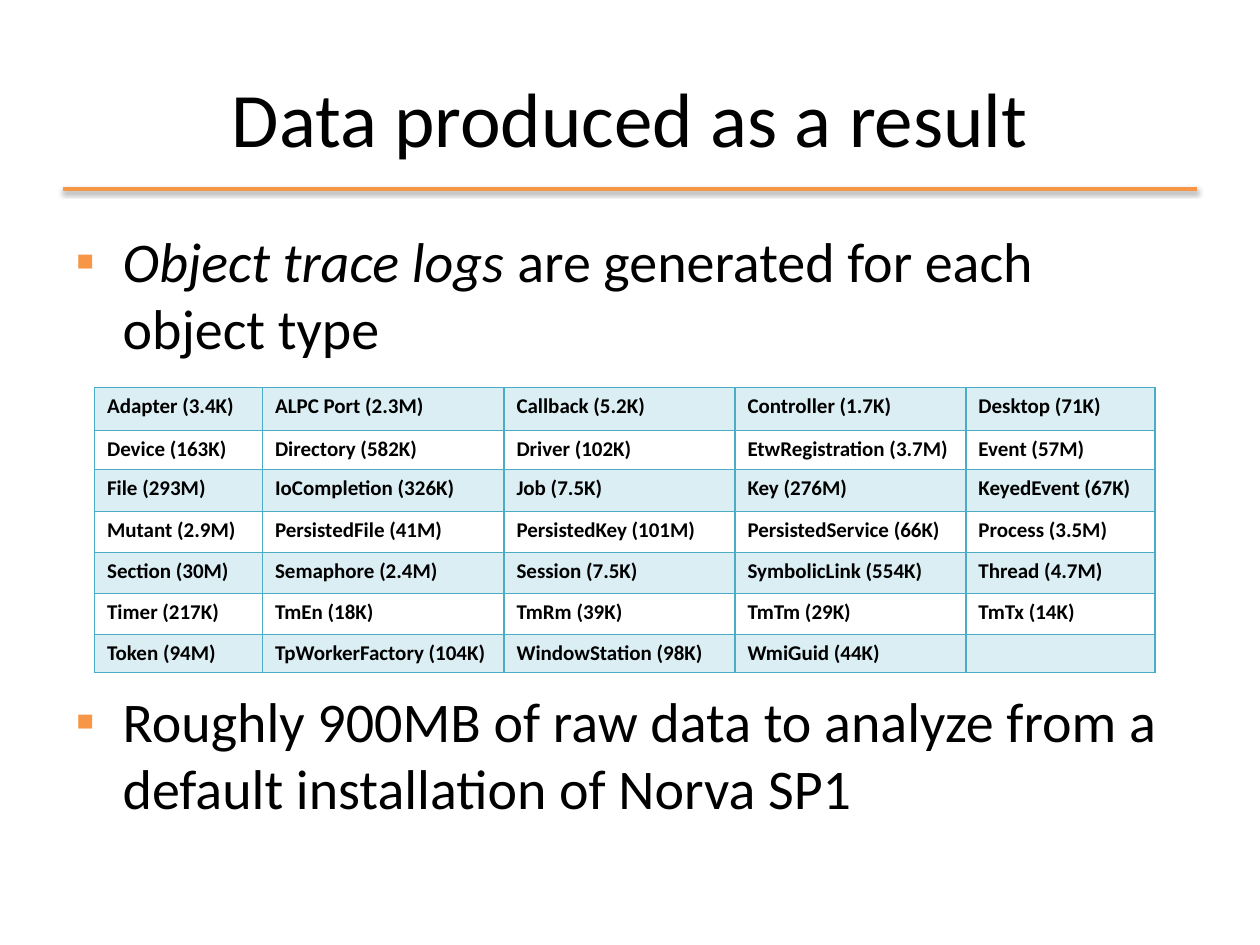
from dataclasses import dataclass

from lxml import etree
from pptx import Presentation
from pptx.dml.color import RGBColor
from pptx.enum.shapes import MSO_CONNECTOR
from pptx.enum.text import MSO_ANCHOR, PP_ALIGN
from pptx.oxml.ns import qn
from pptx.util import Pt

STRAIGHT = MSO_CONNECTOR.STRAIGHT
MIDDLE, TOP = MSO_ANCHOR.MIDDLE, MSO_ANCHOR.TOP
CENTER = PP_ALIGN.CENTER


@dataclass(frozen=True)
class Theme:
    font: str = "Calibri"
    ink: str = "000000"
    accent: str = "F79646"
    grid: str = "4BACC6"
    title: int = 44
    body: int = 32
    cell: int = 12


THEME = Theme()

COLS = [96, 138, 132, 132, 108]
ROWS = [24.6, 22.3, 24, 23.4, 23.4, 23.4, 21.8]
LOGS = [
    ["Adapter (3.4K)", "ALPC Port (2.3M)", "Callback (5.2K)",
     "Controller (1.7K)", "Desktop (71K)"],
    ["Device (163K)", "Directory (582K)", "Driver (102K)",
     "EtwRegistration (3.7M)", "Event (57M)"],
    ["File (293M)", "IoCompletion (326K)", "Job (7.5K)",
     "Key (276M)", "KeyedEvent (67K)"],
    ["Mutant (2.9M)", "PersistedFile (41M)", "PersistedKey (101M)",
     "PersistedService (66K)", "Process (3.5M)"],
    ["Section (30M)", "Semaphore (2.4M)", "Session (7.5K)",
     "SymbolicLink (554K)", "Thread (4.7M)"],
    ["Timer (217K)", "TmEn (18K)", "TmRm (39K)", "TmTm (29K)", "TmTx (14K)"],
    ["Token (94M)", "TpWorkerFactory (104K)", "WindowStation (98K)",
     "WmiGuid (44K)", ""],
]


def add_node(parent, tag, **attrs):
    node = etree.SubElement(parent, qn(tag))
    for name, value in attrs.items():
        node.set(name, str(value))
    return node


def add_run(para, text, size, bold=False, italic=False):
    run = para.add_run()
    run.text = text
    font = run.font
    font.name, font.size = THEME.font, Pt(size)
    font.bold, font.italic = bold, italic
    font.color.rgb = RGBColor.from_string(THEME.ink)


def add_box(slide, left, top, width, height, anchor):
    box = slide.shapes.add_textbox(Pt(left), Pt(top), Pt(width), Pt(height))
    frame = box.text_frame
    frame.word_wrap = True
    frame.vertical_anchor = anchor
    return frame


def add_title(slide, text):
    para = add_box(slide, 36, 21.6, 648, 90, MIDDLE).paragraphs[0]
    para.alignment = CENTER
    add_run(para, text, THEME.title)


def add_rule(slide):
    """Draw the line under the title, with its soft shadow."""
    line = slide.shapes.add_connector(STRAIGHT, Pt(36), Pt(108), Pt(684), Pt(108))
    line.line.color.rgb = RGBColor.from_string(THEME.accent)
    line.line.width = Pt(2)
    effects = add_node(line._element.spPr, "a:effectLst")
    shadow = add_node(effects, "a:outerShdw", blurRad=Pt(3.1), dist=Pt(1.6),
                      dir=90 * 60000, rotWithShape=0)
    color = add_node(shadow, "a:srgbClr", val="000000")
    add_node(color, "a:alpha", val=38000)


def set_bullet(para):
    props = para._p.get_or_add_pPr()
    props.set("marL", str(Pt(27)))
    props.set("indent", str(Pt(-27)))
    color = add_node(props, "a:buClr")
    add_node(color, "a:srgbClr", val=THEME.accent)
    add_node(props, "a:buFont", typeface="Arial")
    add_node(props, "a:buChar", char="▪")


def add_body(slide):
    frame = add_box(slide, 36, 126, 648, 356.4, TOP)
    first, last = frame.paragraphs[0], frame.add_paragraph()
    last.space_before = Pt(186)  # room for the table
    for para in (first, last):
        set_bullet(para)
    add_run(first, "Object trace logs", THEME.body, italic=True)
    add_run(first, " are generated for each object type", THEME.body)
    add_run(last, "Roughly 900MB of raw data to analyze from a default "
                  "installation of Norva SP1", THEME.body)


def set_cell(cell, text, shaded):
    para = cell.text_frame.paragraphs[0]
    if text:
        add_run(para, text, THEME.cell, bold=True)
    else:
        add_node(para._p, "a:endParaRPr", sz=THEME.cell * 100)
    props = cell._tc.get_or_add_tcPr()
    for side in ("a:lnL", "a:lnR", "a:lnT", "a:lnB"):
        fill = add_node(add_node(props, side, w=Pt(1)), "a:solidFill")
        add_node(fill, "a:srgbClr", val=THEME.grid)
    if shaded:
        cell.fill.solid()
        cell.fill.fore_color.rgb = RGBColor.from_string(THEME.grid)
        color = props.find(qn("a:solidFill")).find(qn("a:srgbClr"))
        add_node(color, "a:alpha", val=20000)
    else:
        cell.fill.background()


def add_logs(slide):
    frame = slide.shapes.add_table(len(ROWS), len(COLS), Pt(54), Pt(221.5),
                                   Pt(sum(COLS)), Pt(sum(ROWS)))
    table = frame.table
    table.first_row = table.horz_banding = False
    for col, width in zip(table.columns, COLS):
        col.width = Pt(width)
    for row, height in zip(table.rows, ROWS):
        row.height = Pt(height)
    for r, texts in enumerate(LOGS):
        for c, text in enumerate(texts):
            set_cell(table.cell(r, c), text, shaded=r % 2 == 0)


def main():
    deck = Presentation()
    deck.slide_width, deck.slide_height = Pt(720), Pt(540)
    slide = deck.slides.add_slide(deck.slide_layouts[6])
    add_rule(slide)
    add_title(slide, "Data produced as a result")
    add_body(slide)
    add_logs(slide)
    deck.save("out.pptx")


if __name__ == "__main__":
    main()
